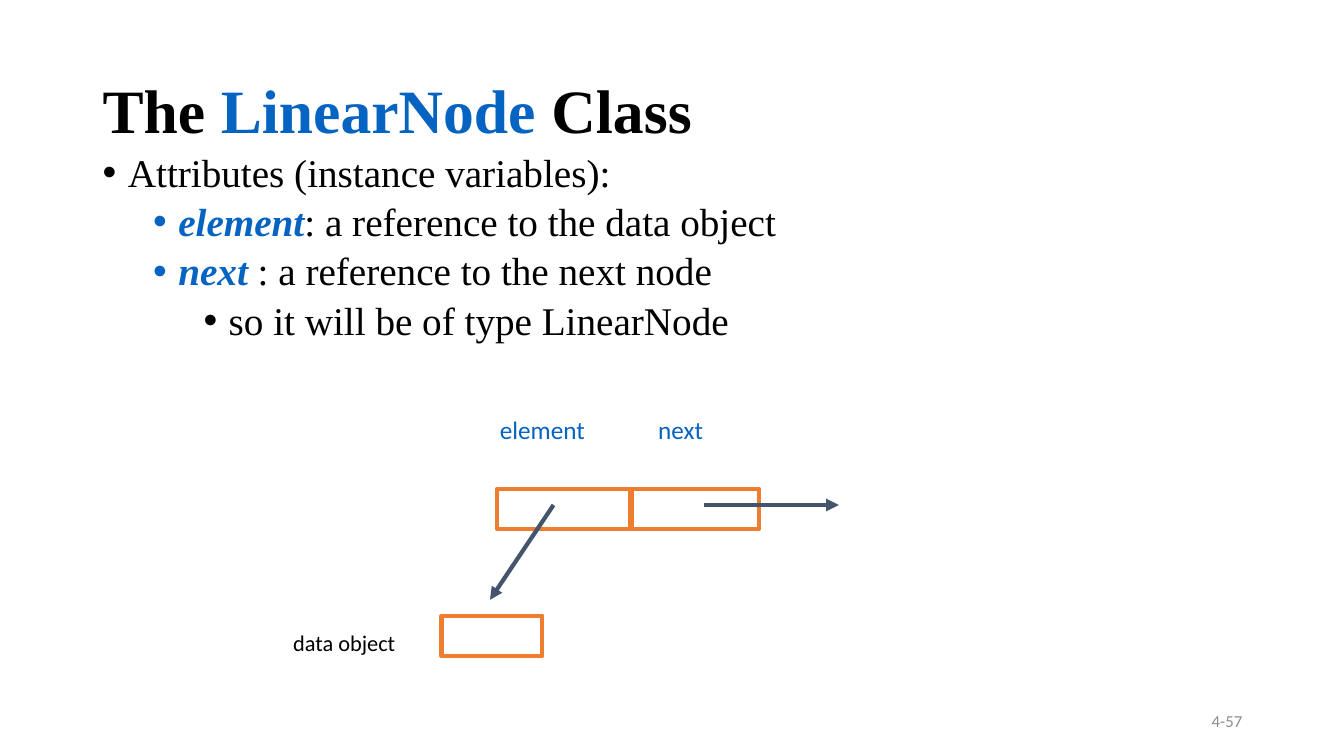
from lxml import etree
from pptx import Presentation
from pptx.dml.color import RGBColor
from pptx.enum.shapes import MSO_CONNECTOR, MSO_SHAPE
from pptx.enum.text import MSO_ANCHOR, PP_ALIGN
from pptx.oxml.ns import qn
from pptx.util import Inches, Pt

STRAIGHT = MSO_CONNECTOR.STRAIGHT
RECTANGLE = MSO_SHAPE.RECTANGLE
TOP, MIDDLE = MSO_ANCHOR.TOP, MSO_ANCHOR.MIDDLE
LEFT, RIGHT = PP_ALIGN.LEFT, PP_ALIGN.RIGHT

SERIF, SANS = "Times New Roman", "Calibri"
BLACK, BLUE, ORANGE, SLATE, GRAY = "000000", "0563C1", "ED7D31", "44546A", "8C8C8C"

ATTRIBUTES = [
    (0, "", "Attributes (instance variables):"),
    (1, "element", ": a reference to the data object"),
    (1, "next ", ": a reference to the next node"),
    (2, "", "so it will be of type LinearNode"),
]
LABELS = [
    ("element", 4.86, 4.06, 1.25, 0.4, 18, BLUE),
    ("next", 6.43, 4.06, 0.79, 0.4, 18, BLUE),
    ("data object", 2.81, 6.19, 1.5, 0.37, 16, BLACK),
]
CELLS = [(4.93, 4.85, 1.32), (6.27, 4.85, 1.26), (4.38, 6.11, 1)]
ARROWS = [((5.49, 5.01), (4.86, 5.95)), ((6.98, 5.01), (8.32, 5.01))]


def color(value):
    return RGBColor.from_string(value)


def add_span(para, text, font=SANS, size=18, fill=BLACK, bold=False, italic=False):
    span = para.add_run()
    span.text = text
    span.font.name = font
    span.font.size = Pt(size)
    span.font.color.rgb = color(fill)
    span.font.bold = bold
    span.font.italic = italic


def add_box(page, left, top, width, height, anchor=TOP):
    box = page.shapes.add_textbox(Inches(left), Inches(top), Inches(width), Inches(height))
    frame = box.text_frame
    frame.word_wrap = True
    frame.vertical_anchor = anchor
    return frame


def add_label(page, text, left, top, width, height, size, fill, anchor=TOP, align=LEFT):
    para = add_box(page, left, top, width, height, anchor).paragraphs[0]
    para.alignment = align
    add_span(para, text, size=size, fill=fill)


def add_title(page):
    para = add_box(page, 0.92, 0.4, 11.5, 1.45, MIDDLE).paragraphs[0]
    para.line_spacing = 0.9
    for text, fill in (("The ", BLACK), ("LinearNode", BLUE), (" Class", BLACK)):
        add_span(para, text, font=SERIF, size=44, fill=fill, bold=True)


def set_bullet(para, level):
    para.level = level
    properties = para._p.get_or_add_pPr()
    properties.set("marL", str(Inches(0.25 + 0.5 * level)))
    properties.set("indent", str(Inches(-0.25)))
    etree.SubElement(properties, qn("a:buFont")).set("typeface", "Arial")
    etree.SubElement(properties, qn("a:buChar")).set("char", "•")


def add_attributes(page):
    frame = add_box(page, 0.92, 1.47, 10.41, 5.48)
    for index, (level, name, text) in enumerate(ATTRIBUTES):
        para = frame.add_paragraph() if index else frame.paragraphs[0]
        para.line_spacing = 0.9
        para.space_before = Pt(5 if level else 10)
        set_bullet(para, level)
        if name:
            add_span(para, name, font=SERIF, size=28, fill=BLUE, bold=True, italic=True)
        add_span(para, text, font=SERIF, size=28)


def add_cell(page, left, top, width):
    cell = page.shapes.add_shape(
        RECTANGLE, Inches(left), Inches(top), Inches(width), Inches(0.4)
    )
    cell.shadow.inherit = False
    cell.fill.background()
    cell.line.color.rgb = color(ORANGE)
    cell.line.width = Pt(3)


def add_arrow(page, start, end):
    arrow = page.shapes.add_connector(STRAIGHT, *map(Inches, start + end))
    arrow.line.color.rgb = color(SLATE)
    arrow.line.width = Pt(3)
    etree.SubElement(arrow.line._get_or_add_ln(), qn("a:tailEnd")).set("type", "triangle")
    etree.SubElement(arrow._element.spPr, qn("a:effectLst"))


def main():
    deck = Presentation()
    deck.slide_width, deck.slide_height = Inches(13.33), Inches(7.5)
    page = deck.slides.add_slide(deck.slide_layouts[6])
    add_label(page, "4-57", 9.42, 6.95, 3, 0.4, 12, GRAY, anchor=MIDDLE, align=RIGHT)
    add_title(page)
    add_attributes(page)
    for cell in CELLS:
        add_cell(page, *cell)
    for label in LABELS:
        add_label(page, *label)
    for start, end in ARROWS:
        add_arrow(page, start, end)
    deck.save("out.pptx")


if __name__ == "__main__":
    main()
